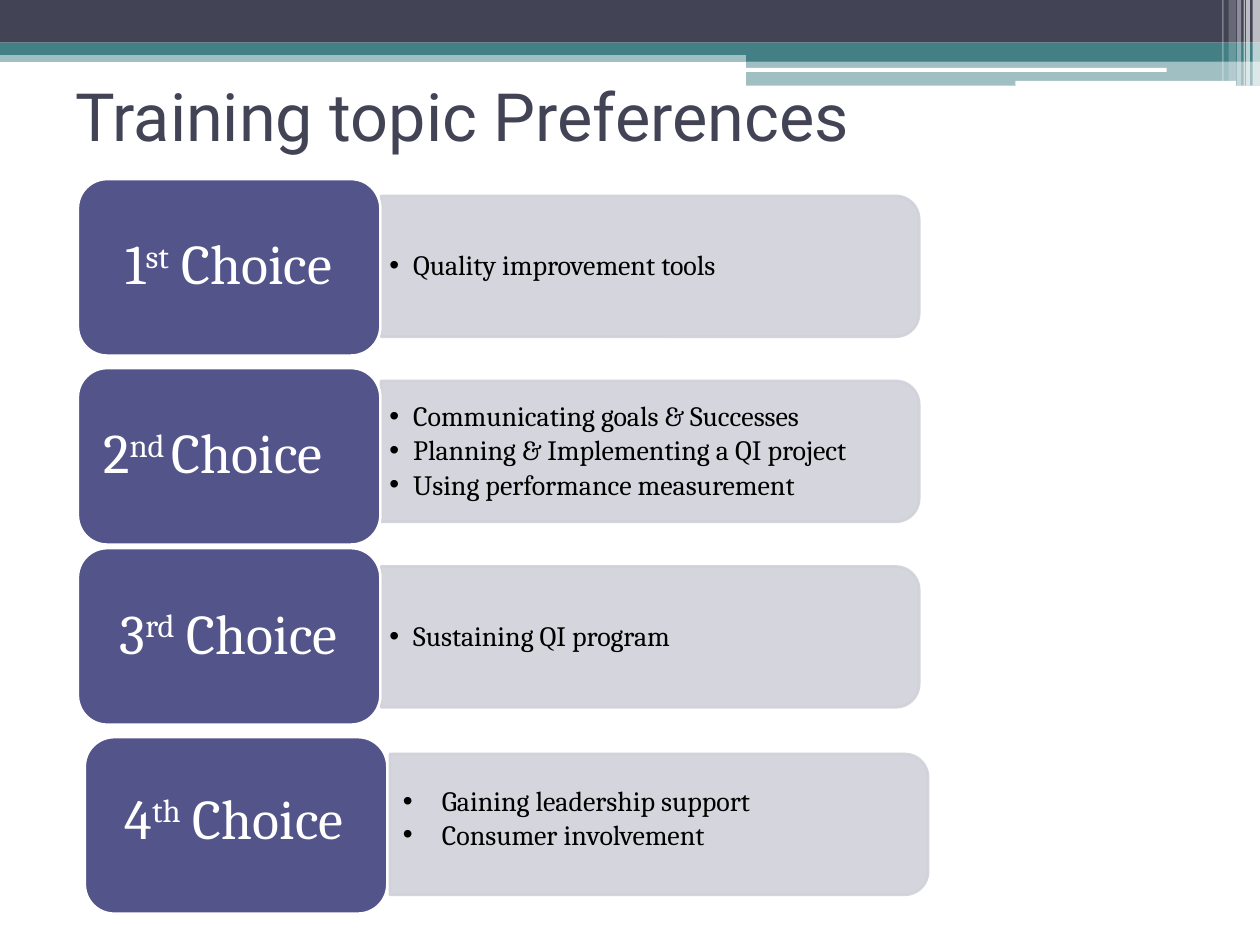
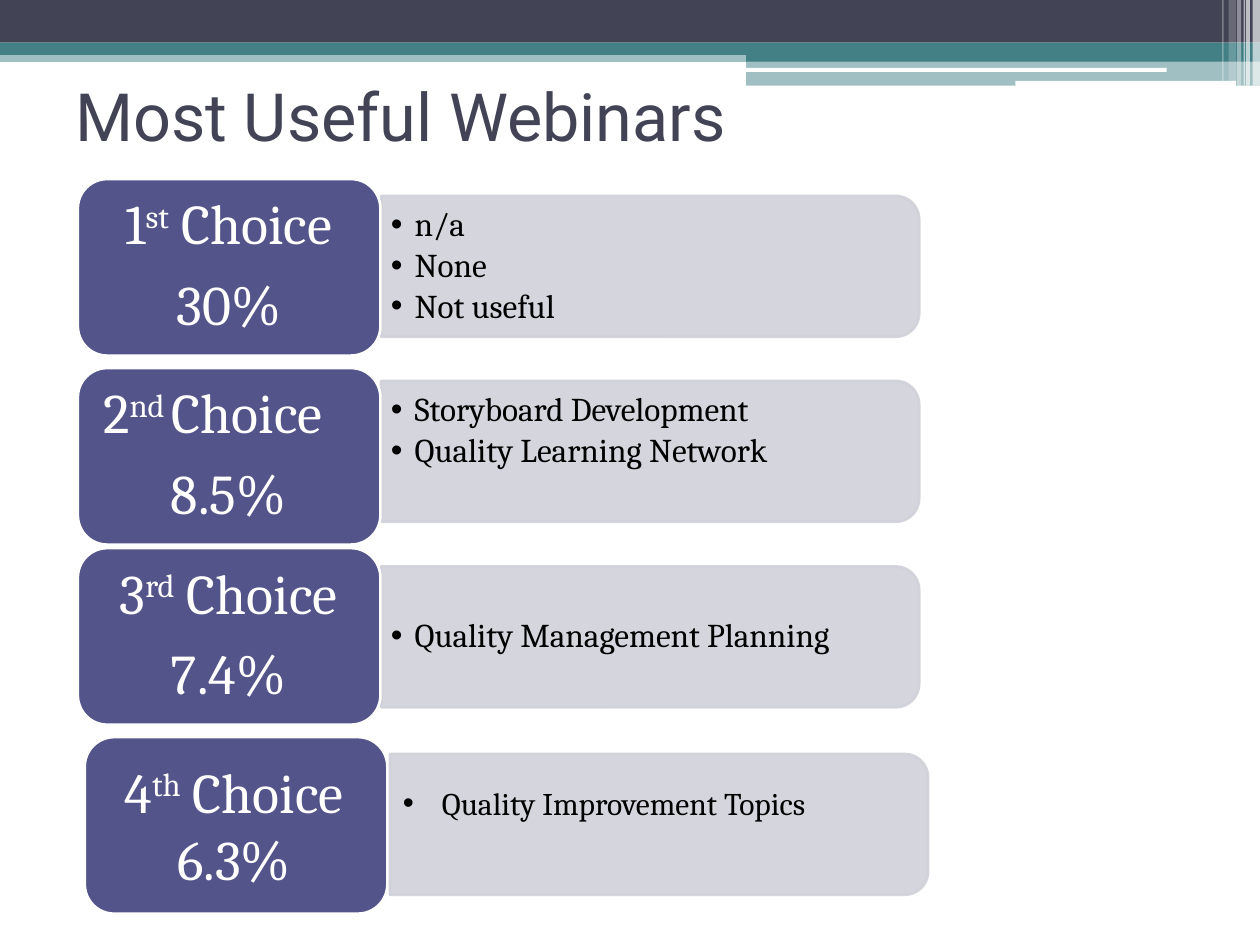
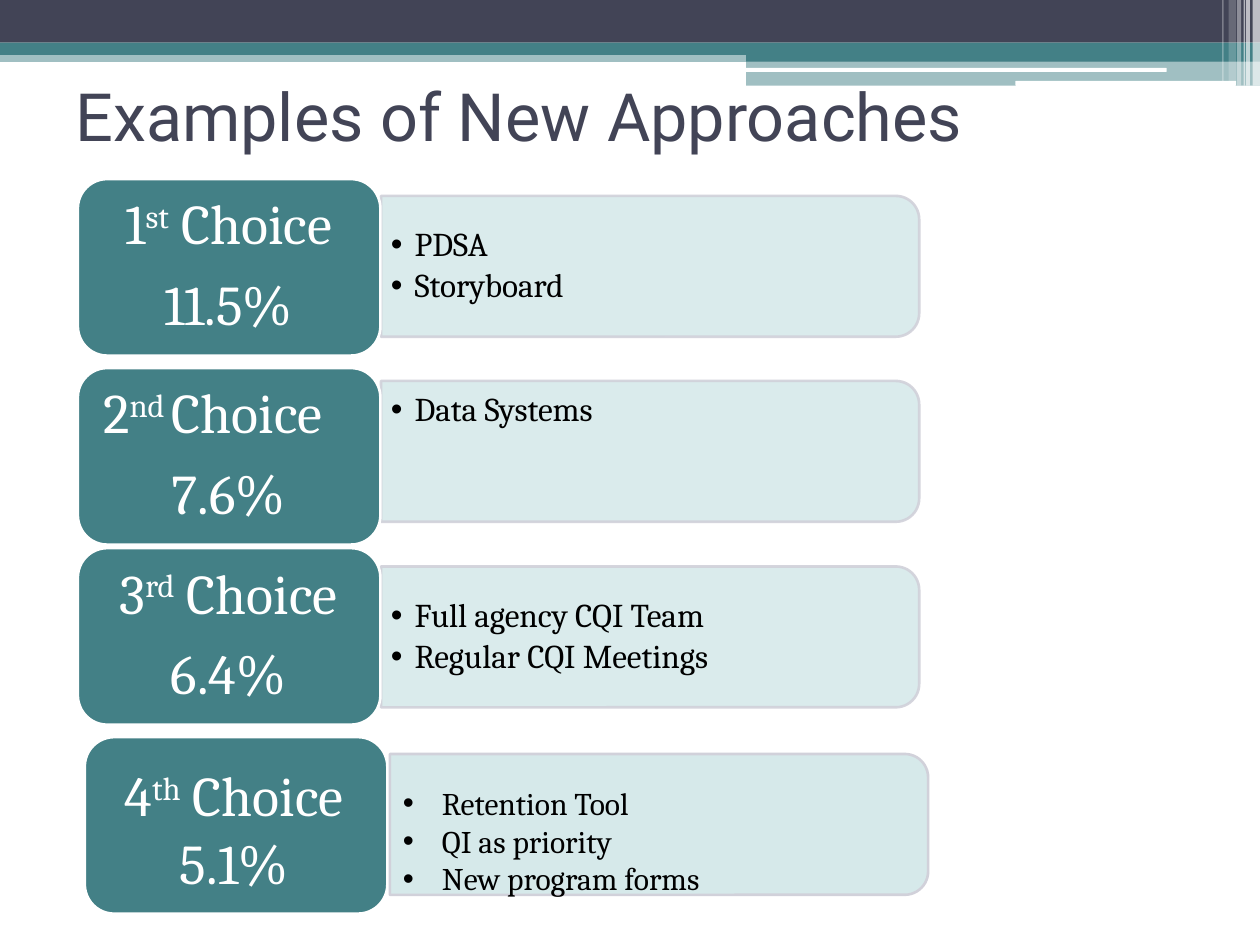
from lxml.etree import SubElement
from pptx import Presentation
from pptx.dml.color import RGBColor
from pptx.enum.shapes import MSO_SHAPE
from pptx.enum.text import MSO_ANCHOR, PP_ALIGN
from pptx.oxml.ns import qn
from pptx.util import Cm, Pt

COLORS = {
    "navy": "424456", "teal": "438086", "white": "FFFFFF", "black": "000000",
    "indigo": "53548A", "lavender": "D1D1DA", "aqua": "D6E9EA",
}
BANDS = [
    (0, 1.02, 25.4, 0.23, "teal", 50),
    (0, 0, 25.4, 0.86, "navy", 100),
    (0, 0.86, 25.4, 0.25, "teal", 100),
    (15.04, 0.99, 10.36, 0.25, "teal", 100),
    (15.04, 1.22, 10.36, 0.51, "teal", 50),
]
WHITE_BARS = [(15.01, 1.37, 8.51, 0.08), (20.47, 1.63, 4.45, 0.1)]
STRIPES = [
    (25.25, 0.15, 1.73, 65), (25.12, 0.08, 1.73, 65), (25.07, 0.03, 1.73, 60),
    (24.94, 0.08, 1.73, 40), (24.77, 0.15, 1.63, 20), (24.64, 0.03, 1.63, 30),
]
RANKS = [("1", "st", " Choice"), ("2", "nd ", "Choice"),
         ("3", "rd", " Choice"), ("4", "th", " Choice")]
LABEL_TOPS = [3.61, 7.42, 11.05]
PANEL_TOPS = [3.95, 7.68, 11.42]
LABEL_SIZE = (6.1, 3.56)
PANEL_SIZE = (10.85, 2.84)
SLIDES = [
    {
        "title": "Training topic Preferences",
        "label": "indigo", "panel": "lavender", "last_opacity": 90,
        "size": 16, "inset": (0.18, 0.08), "top_rows": [],
        "shares": [None] * 4,
        "items": [
            ["Quality improvement tools"],
            ["Communicating goals & Successes",
             "Planning & Implementing a QI project",
             "Using performance measurement"],
            ["Sustaining QI program"],
            ["Gaining leadership support", "Consumer involvement"],
        ],
        "last_label": (15.67, 1.63), "last_items": (8.2, 1.63, 16),
    },
    {
        "title": "Most Useful Webinars",
        "label": "indigo", "panel": "lavender", "last_opacity": 90,
        "size": 19, "inset": (0.21, 0.1), "top_rows": [1],
        "shares": ["30%", "8.5%", "7.4%", "6.3%"],
        "items": [
            ["n/a", "None", "Not useful"],
            ["Storyboard Development", "Quality Learning Network"],
            ["Quality Management Planning"],
            ["Quality Improvement Topics"],
        ],
        "last_label": (15.14, 3), "last_items": (9.47, 2.39, 18),
    },
    {
        "title": "Examples of New Approaches",
        "label": "teal", "panel": "aqua", "last_opacity": 100,
        "size": 19, "inset": (0.21, 0.1), "top_rows": [1],
        "shares": ["11.5%", "7.6%", "6.4%", "5.1%"],
        "items": [
            ["PDSA", "Storyboard"],
            ["Data Systems"],
            ["Full agency CQI Team", "Regular CQI Meetings"],
            ["Retention Tool", "QI as priority", "New program forms"],
        ],
        "last_label": (15.21, 3), "last_items": (7.01, 3.94, 18),
    },
]


class Deck:
    def __init__(self):
        self.presentation = Presentation()
        self.presentation.slide_width = Cm(25.4)
        self.presentation.slide_height = Cm(19.05)
        self.slide = None

    def add_slide(self, title):
        layout = self.presentation.slide_layouts[6]
        self.slide = self.presentation.slides.add_slide(layout)
        for *box, color, opacity in BANDS:
            self.shape(MSO_SHAPE.RECTANGLE, box, color, opacity=opacity)
        for box in WHITE_BARS:
            self.shape(MSO_SHAPE.ROUNDED_RECTANGLE, box, "white")
        for left, width, height, opacity in STRIPES:
            self.shape(MSO_SHAPE.RECTANGLE, (left, 0, width, height), "white",
                       opacity=opacity)
        frame = self.text_box((1.27, 0.84, 22.86, 2.97), MSO_ANCHOR.MIDDLE)
        frame.text = title
        self.format(frame.paragraphs[0], 38, "navy", "Roboto")

    def shape(self, kind, box, color, line=None, opacity=100):
        shape = self.slide.shapes.add_shape(kind, *map(Cm, box))
        shape.shadow.inherit = False
        shape.fill.solid()
        shape.fill.fore_color.rgb = RGBColor.from_string(COLORS[color])
        if line:
            shape.line.color.rgb = RGBColor.from_string(COLORS[line])
            shape.line.width = Pt(1.5)
        else:
            shape.line.fill.background()
        if opacity < 100:
            for element in list(shape._element.spPr.iter(qn("a:srgbClr"))):
                SubElement(element, qn("a:alpha")).set("val", str(opacity * 1000))
        return shape

    def label(self, left, top, color):
        self.shape(MSO_SHAPE.ROUNDED_RECTANGLE, (left, top, *LABEL_SIZE), color, "white")

    def panel(self, left, top, color, opacity=90):
        width, height = PANEL_SIZE
        shift = (width - height) / 2
        box = (left + shift, top - shift, height, width)
        shape = self.shape(MSO_SHAPE.ROUND_2_SAME_RECTANGLE, box, color,
                           "lavender", opacity)
        shape.rotation = 90

    def text_box(self, box, anchor=MSO_ANCHOR.TOP, inset=(0.25, 0.13)):
        frame = self.slide.shapes.add_textbox(*map(Cm, box)).text_frame
        frame.word_wrap = True
        frame.vertical_anchor = anchor
        frame.margin_left = frame.margin_right = Cm(inset[0])
        frame.margin_top = frame.margin_bottom = Cm(inset[1])
        return frame

    def format(self, paragraph, size, color, font="Cambria", gap=None):
        if gap is not None:
            paragraph.line_spacing = 0.9
            paragraph.space_after = Pt(size * gap)
        for run in paragraph.runs:
            run.font.name = font
            run.font.size = Pt(size)
            run.font.color.rgb = RGBColor.from_string(COLORS[color])

    def rank(self, frame, rank, share, align=PP_ALIGN.CENTER, gap=None):
        paragraph = frame.paragraphs[0]
        paragraph.alignment = align
        for text in rank:
            paragraph.add_run().text = text
        paragraph.runs[1].font._element.set("baseline", "30000")
        if share:
            second = frame.add_paragraph()
            second.text = share
            second.alignment = PP_ALIGN.CENTER
        for paragraph in frame.paragraphs:
            self.format(paragraph, 32, "white", gap=gap)

    def bullets(self, frame, items, size, indent, gap=None):
        frame.text = "\n".join(items)
        for paragraph in frame.paragraphs:
            properties = paragraph._p.get_or_add_pPr()
            properties.set("marL", str(Cm(indent)))
            properties.set("indent", str(-Cm(indent)))
            SubElement(properties, qn("a:buFont")).set("typeface", "Arial")
            SubElement(properties, qn("a:buChar")).set("char", "•")
            self.format(paragraph, size, "black", gap=gap)

    def choice(self, row, content):
        panel_top, label_top = PANEL_TOPS[row], LABEL_TOPS[row]
        self.panel(7.68, panel_top, content["panel"])
        anchor = MSO_ANCHOR.TOP if row in content["top_rows"] else MSO_ANCHOR.MIDDLE
        frame = self.text_box((7.67, panel_top + 0.14, 10.69, 2.57), anchor,
                              content["inset"])
        self.bullets(frame, content["items"][row], content["size"], 0.48, 0.15)
        self.label(1.57, label_top, content["label"])
        frame = self.text_box((1.74, label_top + 0.17, 5.74, 3.2),
                              MSO_ANCHOR.MIDDLE, (0.34, 0.17))
        align = PP_ALIGN.LEFT if row == 1 else PP_ALIGN.CENTER
        self.rank(frame, RANKS[row], content["shares"][row], align, 0.35)

    def last_choice(self, content):
        self.label(1.71, 14.86, content["label"])
        self.panel(7.86, 15.2, content["panel"], content["last_opacity"])
        top, height = content["last_label"]
        frame = self.text_box((1.85, top, 5.74, height))
        self.rank(frame, RANKS[3], content["shares"][3])
        width, height, size = content["last_items"]
        frame = self.text_box((7.87, 15.67, width, height))
        self.bullets(frame, content["items"][3], size, 0.79)


def main():
    deck = Deck()
    for content in SLIDES:
        deck.add_slide(content["title"])
        for row in range(3):
            deck.choice(row, content)
        deck.last_choice(content)
    deck.presentation.save("out.pptx")


if __name__ == "__main__":
    main()
